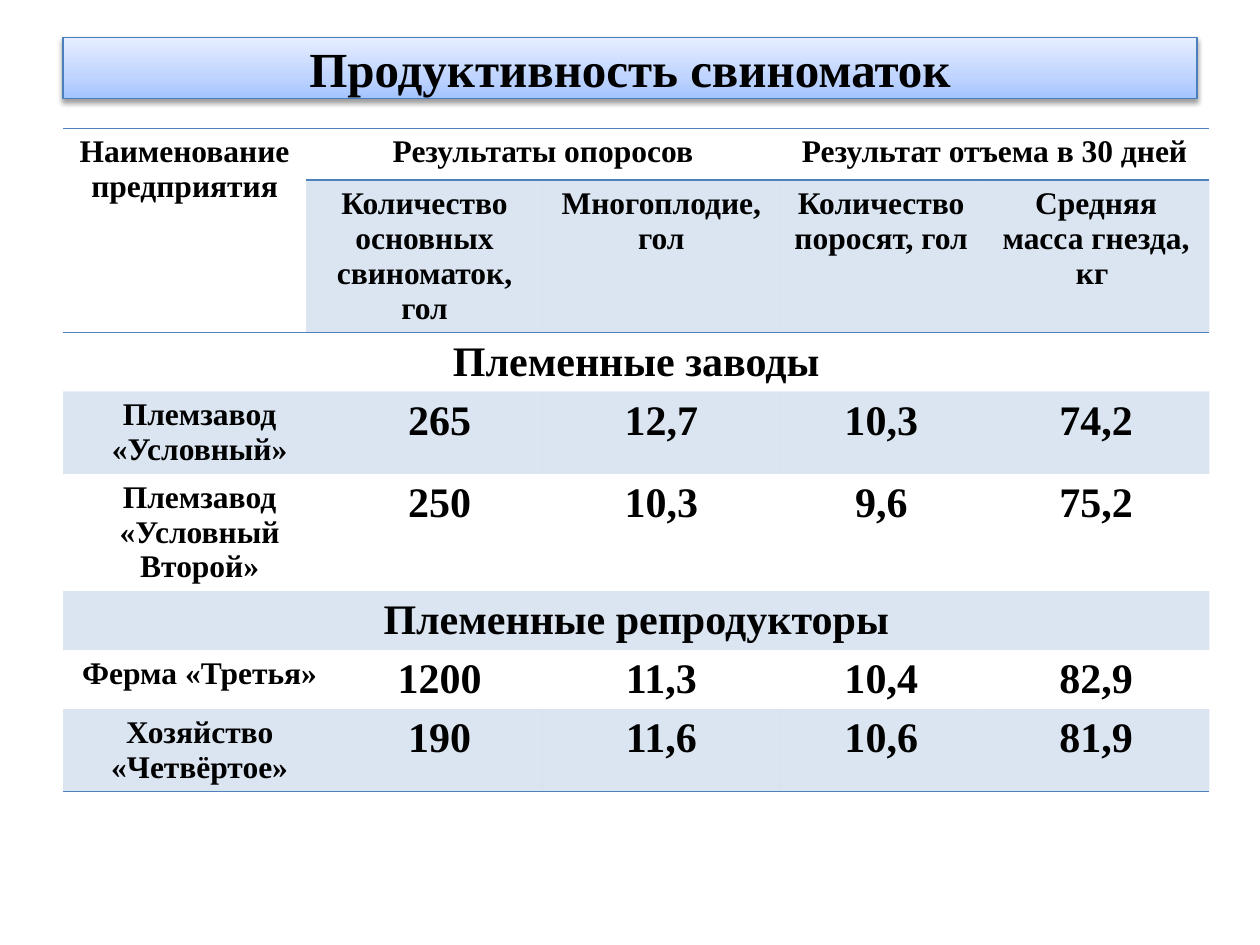
from typing import NamedTuple

from lxml.etree import SubElement
from pptx import Presentation
from pptx.dml.color import RGBColor
from pptx.enum.shapes import MSO_SHAPE
from pptx.enum.text import MSO_ANCHOR, PP_ALIGN
from pptx.oxml.ns import qn
from pptx.util import Inches, Pt

FONT = "Times New Roman"
BLACK = RGBColor(0, 0, 0)
BLUE = RGBColor(0x4F, 0x81, 0xBD)
EDGE = RGBColor(0x4B, 0x7E, 0xBC)
STOPS = [
    (0, RGBColor(0xA4, 0xC4, 0xFF)),
    (35, RGBColor(0xBF, 0xD4, 0xFF)),
    (100, RGBColor(0xE6, 0xEE, 0xFF)),
]
NO_STYLE = "{2D5ABB26-0587-4C30-8999-92F81FD0307C}"
WIDTHS = [1.93, 0.15, 1.64, 1.88, 1.61, 1.8]
ROW_H = 0.41
SMALL, LARGE = 18, 24


class Entry(NamedTuple):
    text: str
    col: int
    size: int = SMALL
    wide: int = 1
    high: int = 1


def band(text: str) -> list[Entry]:
    """A group heading across the whole table."""
    return [Entry(text, 0, LARGE, len(WIDTHS))]


def farm(name: str, *values: str) -> list[Entry]:
    """A farm's name over two columns, then its figures."""
    cells = [Entry(value, col, LARGE) for col, value in enumerate(values, 2)]
    return [Entry(name, 0, wide=2), *cells]


ROWS = [
    [
        Entry("Наименование предприятия", 0, high=2),
        Entry("Результаты опоросов", 1, wide=3),
        Entry("Результат отъема в 30 дней", 4, wide=2),
    ],
    [
        Entry("Количество основных свиноматок, гол", 1, wide=2),
        Entry("Многоплодие, гол", 3),
        Entry("Количество поросят, гол ", 4),
        Entry("Средняя масса гнезда, кг ", 5),
    ],
    band("Племенные заводы"),
    farm("Племзавод «Условный»", "265", "12,7", "10,3", "74,2"),
    farm("Племзавод «Условный Второй»", "250", "10,3", "9,6", "75,2"),
    band("Племенные репродукторы"),
    farm("Ферма «Третья»", "1200", "11,3", "10,4", "82,9"),
    farm("Хозяйство «Четвёртое»", "190", "11,6", "10,6", "81,9"),
]
RULES = {0: ("lnT", "lnB"), 1: ("lnB",), len(ROWS) - 1: ("lnB",)}


def add(parent, tag: str, **attrs):
    return SubElement(parent, qn(f"a:{tag}"), {k: str(v) for k, v in attrs.items()})


def tint(parent, color: RGBColor, alpha: int = 100) -> None:
    """Add a colour with its opacity in percent."""
    node = add(parent, "srgbClr", val=color)
    if alpha < 100:
        add(node, "alpha", val=alpha * 1000)


def write(frame, text: str, size: int) -> None:
    frame.text = text
    line = frame.paragraphs[0]
    line.alignment = PP_ALIGN.CENTER
    font = line.runs[0].font
    font.name, font.size, font.bold = FONT, Pt(size), True
    font.color.rgb = BLACK


def draw_title(slide, text: str) -> None:
    box = slide.shapes.add_shape(
        MSO_SHAPE.RECTANGLE, Inches(0.5), Inches(0.3), Inches(9), Inches(0.48)
    )
    box.fill.gradient()
    box.fill.gradient_angle = 90
    stops = box.element.spPr.find(qn("a:gradFill")).find(qn("a:gsLst"))
    stops.clear()
    for place, color in STOPS:
        tint(add(stops, "gs", pos=place * 1000), color)
    box.line.color.rgb = EDGE
    box.line.width = Pt(0.75)
    box.shadow.inherit = False
    glow = add(
        box.element.spPr.find(qn("a:effectLst")), "outerShdw",
        blurRad=Pt(3.1), dist=Pt(1.6), dir=5400000, rotWithShape=0,
    )
    tint(glow, BLACK, 38)
    box.text_frame.word_wrap = True
    box.text_frame.vertical_anchor = MSO_ANCHOR.MIDDLE
    write(box.text_frame, text, 28)


def style(cell, row: int, shade: bool) -> None:
    """Rule the cell's edges, then fill it if it is shaded."""
    props = cell._tc.get_or_add_tcPr()
    for side in RULES.get(row, ()):
        tint(add(add(props, side, w=Pt(1)), "solidFill"), BLUE)
    if shade:
        cell.fill.solid()
        cell.fill.fore_color.rgb = BLUE
        color = props.find(qn("a:solidFill")).find(qn("a:srgbClr"))
        add(color, "alpha", val=20000)
    else:
        cell.fill.background()


def draw_table(slide) -> None:
    table = slide.shapes.add_table(
        len(ROWS), len(WIDTHS), Inches(0.5), Inches(1.02),
        Inches(sum(WIDTHS)), Inches(ROW_H * len(ROWS)),
    ).table
    table.first_row = table.horz_banding = False
    table._tbl.tblPr.find(qn("a:tableStyleId")).text = NO_STYLE
    for col, width in zip(table.columns, WIDTHS):
        col.width = Inches(width)
    for row, entries in enumerate(ROWS):
        for col in range(len(WIDTHS)):
            shade = row % 2 == 1 and (row, col) != (1, 0)
            style(table.cell(row, col), row, shade)
        for item in entries:
            cell = table.cell(row, item.col)
            if item.wide * item.high > 1:
                last = table.cell(row + item.high - 1, item.col + item.wide - 1)
                cell.merge(last)
            write(cell.text_frame, item.text, item.size)


def main() -> None:
    deck = Presentation()
    deck.slide_width, deck.slide_height = Inches(10), Inches(7.5)
    slide = deck.slides.add_slide(deck.slide_layouts[6])
    draw_title(slide, "Продуктивность свиноматок")
    draw_table(slide)
    deck.save("out.pptx")


if __name__ == "__main__":
    main()
